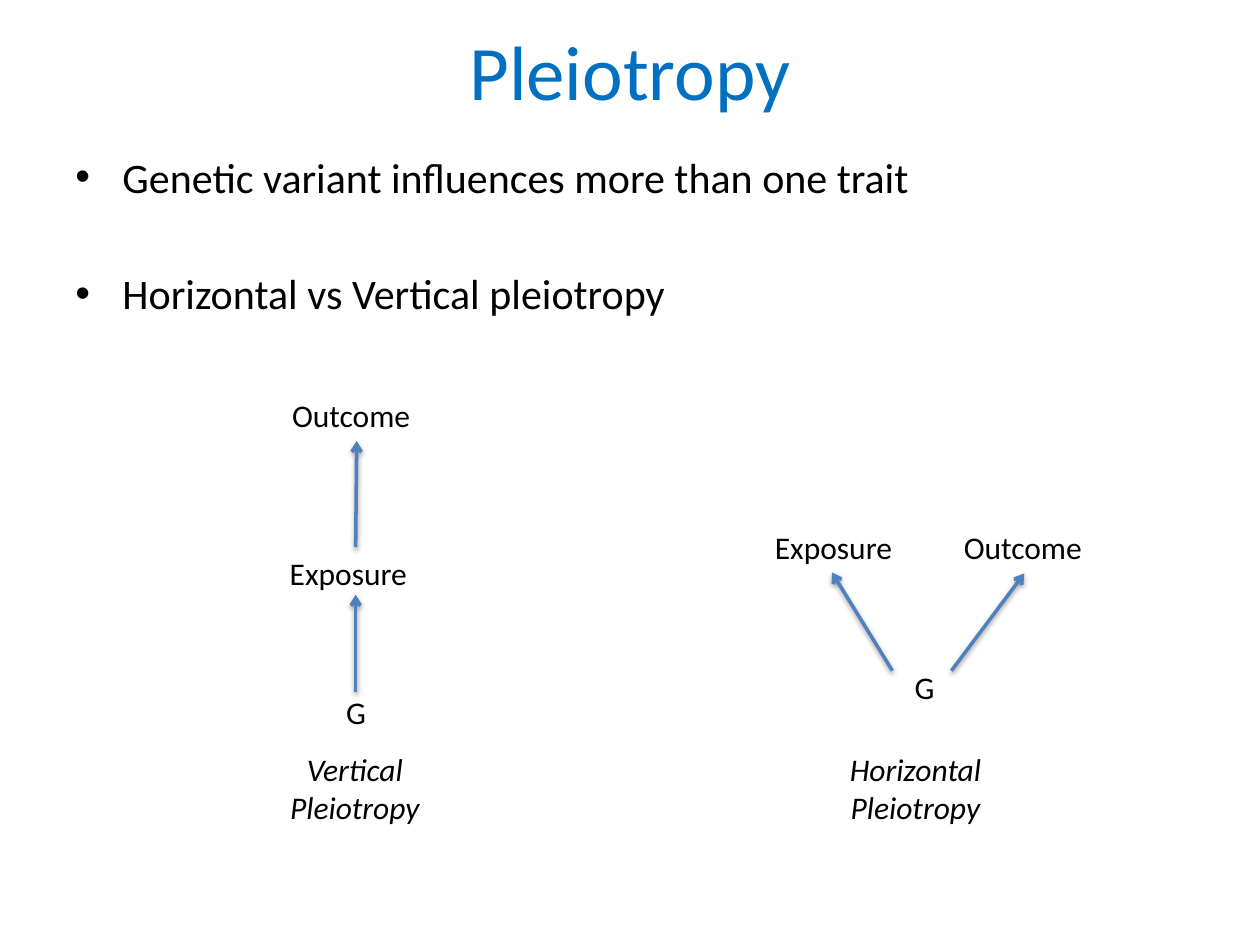
from lxml.etree import SubElement
from pptx import Presentation
from pptx.dml.color import RGBColor
from pptx.enum.shapes import MSO_CONNECTOR
from pptx.enum.text import MSO_ANCHOR, PP_ALIGN
from pptx.oxml.ns import qn
from pptx.util import Cm, Pt

FONT = "Calibri"
BLACK = "000000"
TITLE_BLUE = "0070C0"
ARROW_BLUE = "4F81BD"


def color(value):
    return RGBColor.from_string(value)


def style(paragraph, size, value=BLACK, align=PP_ALIGN.LEFT, italic=False):
    paragraph.alignment = align
    font = paragraph.font
    font.name = FONT
    font.size = Pt(size)
    font.italic = italic
    font.color.rgb = color(value)


def add_text(slide, box, text, size=18, wrap=True, **options):
    shape = slide.shapes.add_textbox(*map(Cm, box))
    frame = shape.text_frame
    frame.word_wrap = wrap
    frame.text = text
    for paragraph in frame.paragraphs:
        style(paragraph, size, **options)
    return frame


def add_shadow(connector):
    effects = SubElement(connector._element.spPr, qn("a:effectLst"))
    shadow = SubElement(effects, qn("a:outerShdw"), blurRad=str(Pt(3.1)),
                        dist=str(Pt(1.6)), dir="5400000", rotWithShape="0")
    tint = SubElement(shadow, qn("a:srgbClr"), val=BLACK)
    SubElement(tint, qn("a:alpha"), val="38000")


def add_arrow(slide, left, top, start, end):
    points = (left + start[0], top + start[1], left + end[0], top + end[1])
    connector = slide.shapes.add_connector(MSO_CONNECTOR.STRAIGHT, *map(Cm, points))
    connector.line.color.rgb = color(ARROW_BLUE)
    connector.line.width = Pt(2)
    SubElement(connector.line._get_or_add_ln(), qn("a:tailEnd"), type="arrow")
    add_shadow(connector)


def add_title(slide, box):
    frame = add_text(slide, box, "Pleiotropy", 44, value=TITLE_BLUE, align=PP_ALIGN.CENTER)
    frame.vertical_anchor = MSO_ANCHOR.MIDDLE


def add_bullets(slide, box, items):
    frame = add_text(slide, box, "\n".join(items), 24)
    indent = Cm(0.95)
    for index, paragraph in enumerate(frame.paragraphs):
        paragraph.space_before = Pt(38 if index else 0)
        properties = paragraph._p.get_or_add_pPr()
        properties.set("marL", str(indent))
        properties.set("indent", str(-indent))
        bullet_font = properties.makeelement(qn("a:buFont"), {"typeface": "Arial"})
        bullet = properties.makeelement(qn("a:buChar"), {"char": "•"})
        properties.find(qn("a:defRPr")).addprevious(bullet_font)
        bullet_font.addnext(bullet)


def add_diagram(slide, left, top, traits, gene, caption, arrows):
    for text, x, y in traits:
        add_text(slide, (left + x, top + y, 3.1, 1.02), text)
    add_text(slide, (left + gene[0], top + gene[1], 0.91, 1.02), "G", wrap=False)
    for start, end in arrows:
        add_arrow(slide, left, top, start, end)
    text, x, y = caption
    add_text(slide, (left + x, top + y, 3.23, 1.8), text,
             align=PP_ALIGN.CENTER, italic=True)


def main():
    presentation = Presentation()
    presentation.slide_width = Cm(25.4)
    presentation.slide_height = Cm(19.05)
    slide = presentation.slides.add_slide(presentation.slide_layouts[6])
    add_title(slide, (1.27, 0.13, 22.86, 2.57))
    add_bullets(slide, (1.27, 2.92, 22.86, 14.1), [
        "Genetic variant influences more than one trait",
        "Horizontal vs Vertical pleiotropy",
    ])
    add_diagram(
        slide, 5.54, 7.85,
        traits=[("Exposure", 0.05, 3.2), ("Outcome", 0.1, 0)],
        gene=(1.19, 5.99),
        caption=("Vertical Pleiotropy", 0, 7.14),
        arrows=[((1.63, 6.1), (1.63, 4.14)), ((1.63, 3.18), (1.65, 1.04))],
    )
    add_diagram(
        slide, 15.37, 10.52,
        traits=[("Exposure", 0, 0), ("Outcome", 3.81, 0)],
        gene=(2.82, 2.82),
        caption=("Horizontal Pleiotropy", 1.47, 4.47),
        arrows=[((2.62, 3), (1.4, 1.02)), ((3.81, 3), (5.28, 1.04))],
    )
    presentation.save("out.pptx")


if __name__ == "__main__":
    main()
